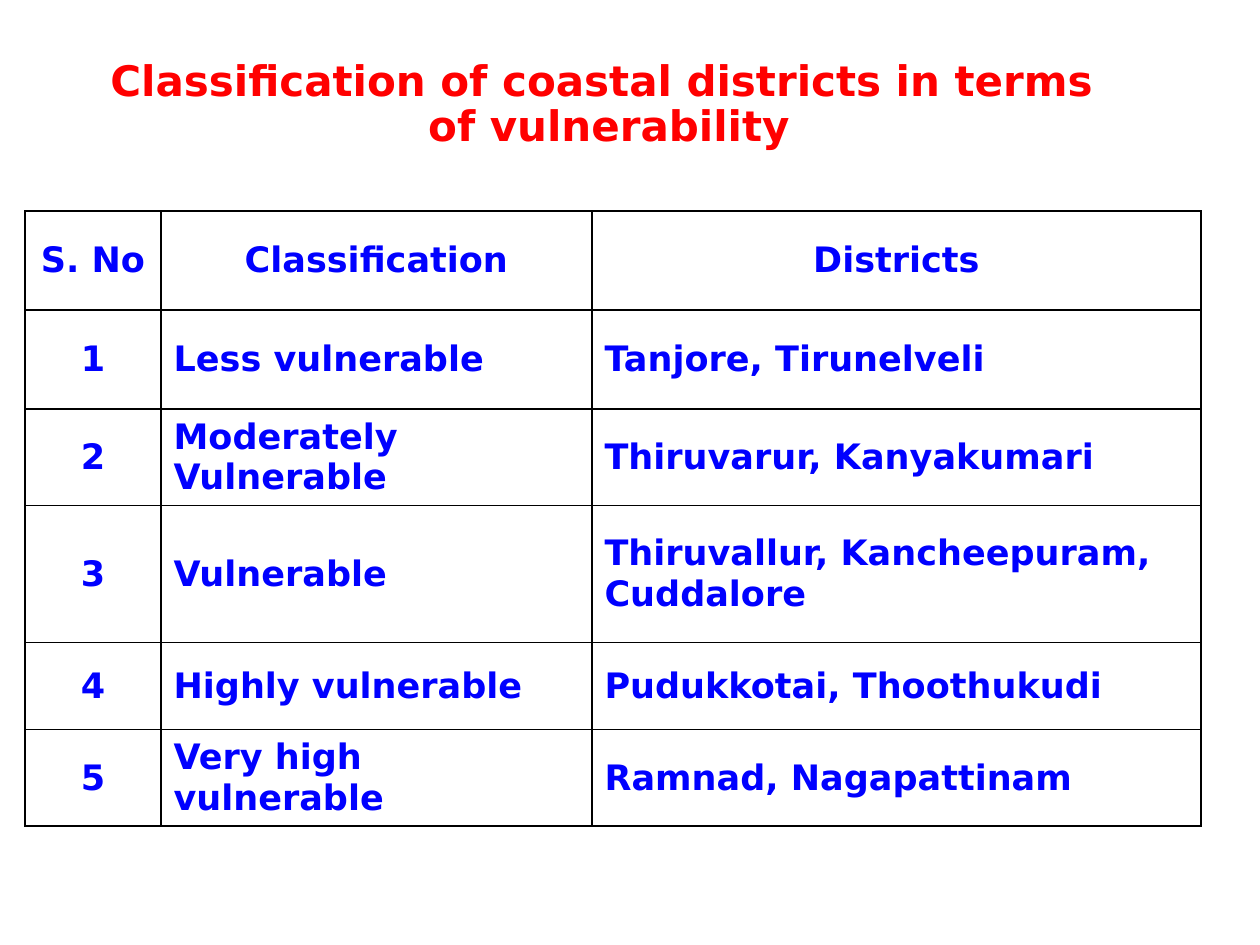
"""Build a slide with a table of coastal districts by vulnerability."""
from lxml.etree import SubElement
from pptx import Presentation
from pptx.dml.color import RGBColor
from pptx.enum.text import MSO_ANCHOR, PP_ALIGN
from pptx.oxml.ns import qn
from pptx.util import Emu, Pt

TITLE = "Classification of coastal districts in terms \vof vulnerability"
ROWS = [
    ("S. No", "Classification", "Districts"),
    ("1", "Less vulnerable", "Tanjore, Tirunelveli"),
    ("2", "Moderately Vulnerable", "Thiruvarur, Kanyakumari"),
    ("3", "Vulnerable", "Thiruvallur, Kancheepuram, Cuddalore"),
    ("4", "Highly vulnerable", "Pudukkotai, Thoothukudi"),
    ("5", "Very high vulnerable", "Ramnad, Nagapattinam"),
]
COLORS = {"title": "FF0000", "table": "0000FF", "border": "000000"}
SLIDE_SIZE = (1260, 945)
TITLE_BOX = (0, 53, 1218, 105)
TABLE_ORIGIN = (25, 211)
COLUMN_WIDTHS = (136, 431, 609)
ROW_HEIGHTS = (99, 99, 96, 137, 87, 94)
TITLE_FONT = {"name": "DejaVu Sans", "size": Pt(24), "bold": True}
TABLE_FONT = {**TITLE_FONT, "size": Pt(20)}


def px(length):
    return Emu(round(length * 914400 / 126))


def format_paragraph(paragraph, font_values, color, alignment):
    paragraph.alignment = alignment
    for holder in (paragraph, *paragraph.runs):
        for name, value in font_values.items():
            setattr(holder.font, name, value)
        holder.font.color.rgb = RGBColor.from_string(COLORS[color])


def add_borders(cell):
    properties = cell._tc.get_or_add_tcPr()
    for side in ("lnL", "lnR", "lnT", "lnB"):
        line = SubElement(properties, qn(f"a:{side}"), w=str(Pt(1)))
        fill = SubElement(line, qn("a:solidFill"))
        SubElement(fill, qn("a:srgbClr"), val=COLORS["border"])


def add_title(slide):
    frame = slide.shapes.add_textbox(*map(px, TITLE_BOX)).text_frame
    frame.word_wrap = True
    frame.vertical_anchor = MSO_ANCHOR.MIDDLE
    paragraph = frame.paragraphs[0]
    paragraph.text = TITLE
    paragraph.line_spacing = 0.9
    format_paragraph(paragraph, TITLE_FONT, "title", PP_ALIGN.CENTER)


def add_district_table(slide):
    size = (sum(COLUMN_WIDTHS), sum(ROW_HEIGHTS))
    table = slide.shapes.add_table(
        len(ROWS), len(COLUMN_WIDTHS), *map(px, TABLE_ORIGIN + size)
    ).table
    table.first_row = table.horz_banding = False
    for column, width in zip(table.columns, COLUMN_WIDTHS):
        column.width = px(width)
    for row_index, (texts, height) in enumerate(zip(ROWS, ROW_HEIGHTS)):
        table.rows[row_index].height = px(height)
        for column_index, text in enumerate(texts):
            cell = table.cell(row_index, column_index)
            cell.text = text
            cell.vertical_anchor = MSO_ANCHOR.MIDDLE
            centred = row_index == 0 or column_index == 0
            alignment = PP_ALIGN.CENTER if centred else PP_ALIGN.LEFT
            format_paragraph(cell.text_frame.paragraphs[0], TABLE_FONT, "table", alignment)
            add_borders(cell)
            cell.fill.background()


def main():
    presentation = Presentation()
    presentation.slide_width, presentation.slide_height = map(px, SLIDE_SIZE)
    slide = presentation.slides.add_slide(presentation.slide_layouts[6])
    add_title(slide)
    add_district_table(slide)
    presentation.save("out.pptx")


if __name__ == "__main__":
    main()
